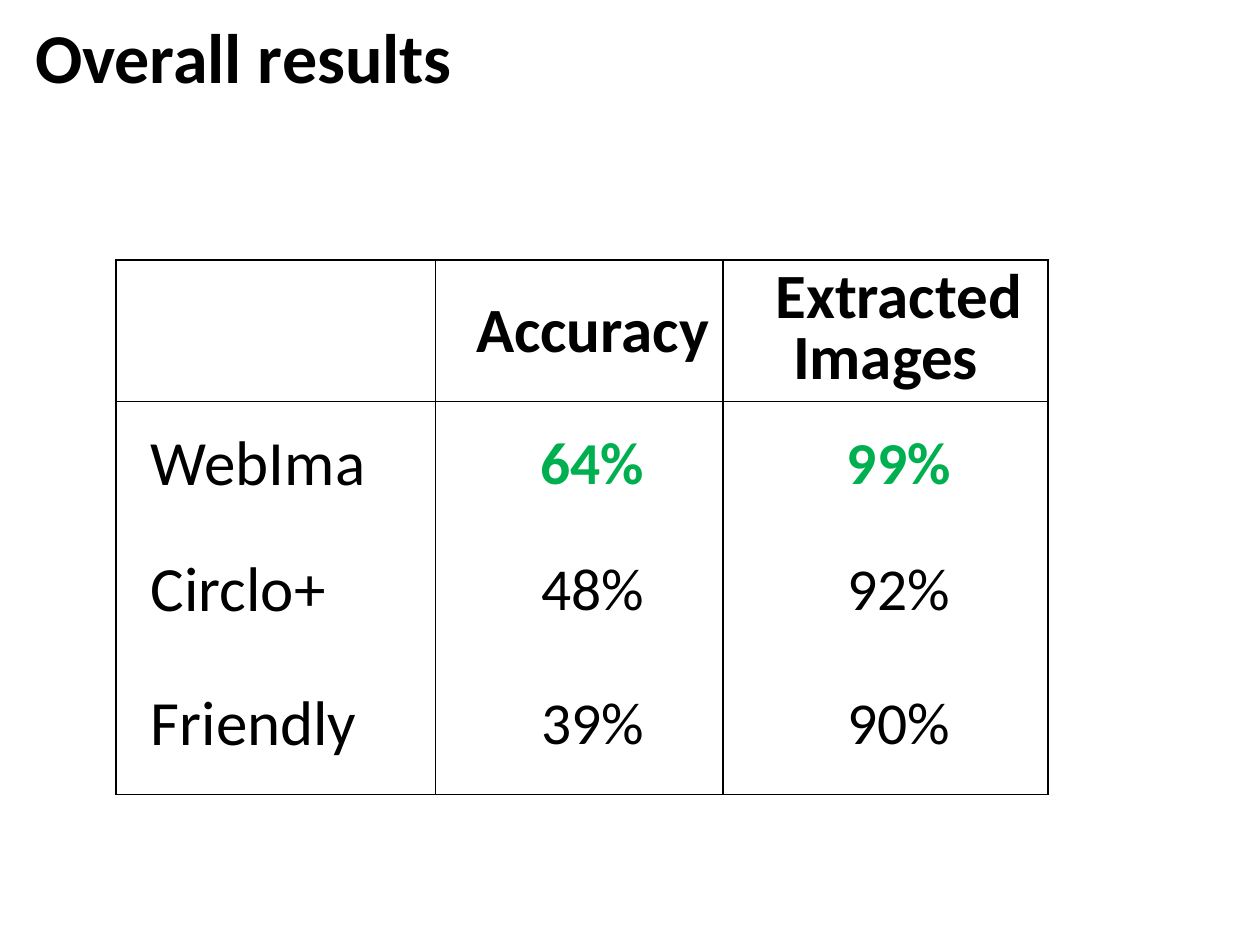
"""Build the overall results slide with its accuracy table."""
from lxml import etree
from pptx import Presentation
from pptx.dml.color import RGBColor
from pptx.enum import text
from pptx.oxml import ns
from pptx.util import Pt


def style(paragraph, size, bold, color="000000"):
    font = paragraph.runs[0].font
    font.name = "Calibri"
    font.size = Pt(size)
    font.bold = bold
    font.color.rgb = RGBColor.from_string(color)


def add_border(cell, side, visible):
    line = etree.SubElement(cell._tc.get_or_add_tcPr(), ns.qn(f"a:ln{side}"), w=str(Pt(1)))
    if visible:
        fill = etree.SubElement(line, ns.qn("a:solidFill"))
        etree.SubElement(fill, ns.qn("a:srgbClr"), val="000000")
    else:
        etree.SubElement(line, ns.qn("a:noFill"))


results = [
    ["", "Accuracy", "Extracted Images"],
    ["WebIma", "64%", "99%"],
    ["Circlo+", "48%", "92%"],
    ["Friendly", "39%", "90%"],
]
column_widths = [182.7, 164.4, 185.6]
row_heights = [80.8, 72, 72, 80.6]

prs = Presentation()
prs.slide_width, prs.slide_height = Pt(720), Pt(540)
slide = prs.slides.add_slide(prs.slide_layouts[6])

table = slide.shapes.add_table(
    len(results), len(column_widths), Pt(66.2), Pt(148.5),
    Pt(sum(column_widths)), Pt(sum(row_heights))).table
table.first_row = False
table.horz_banding = False
for column, width in zip(table.columns, column_widths):
    column.width = Pt(width)
for row, height in zip(table.rows, row_heights):
    row.height = Pt(height)

for r, entries in enumerate(results):
    for c, entry in enumerate(entries):
        cell = table.cell(r, c)
        cell.vertical_anchor = text.MSO_ANCHOR.MIDDLE
        cell.margin_left = cell.margin_right = Pt(5)
        cell.margin_top = cell.margin_bottom = 0
        for side, visible in (("L", True), ("R", True), ("T", r < 2), ("B", r in (0, 3))):
            add_border(cell, side, visible)
        cell.fill.background()
        if not entry:
            continue
        paragraph = cell.text_frame.paragraphs[0]
        paragraph.text = entry
        paragraph.space_after = Pt(4)
        properties = paragraph._p.get_or_add_pPr()
        properties.set("marL", "0")
        properties.set("indent", str(Pt(15)))
        if c:
            paragraph.alignment = text.PP_ALIGN.CENTER
        if r == 0 and c == 2:
            paragraph.line_spacing = 0.8
        best = r == 1 and c > 0
        style(paragraph, 34 if r and c else 36, r == 0 or best, "00B050" if best else "000000")

title = slide.shapes.add_textbox(Pt(13), Pt(11.5), Pt(620.6), Pt(46)).text_frame
title.word_wrap = True
title.vertical_anchor = text.MSO_ANCHOR.MIDDLE
title.text = "Overall results"
title.paragraphs[0].line_spacing = 0.9
style(title.paragraphs[0], 40, True)

prs.save("out.pptx")
